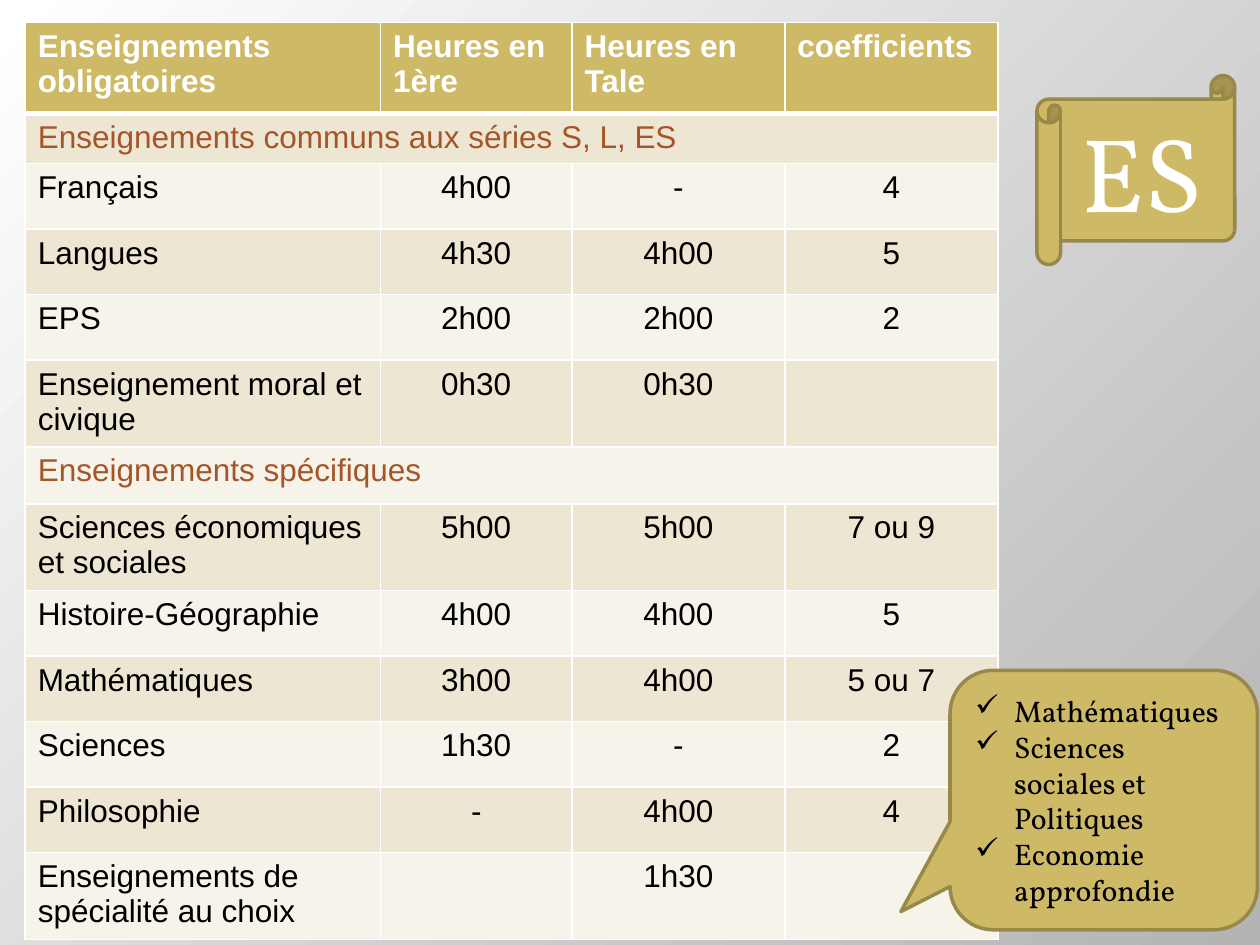
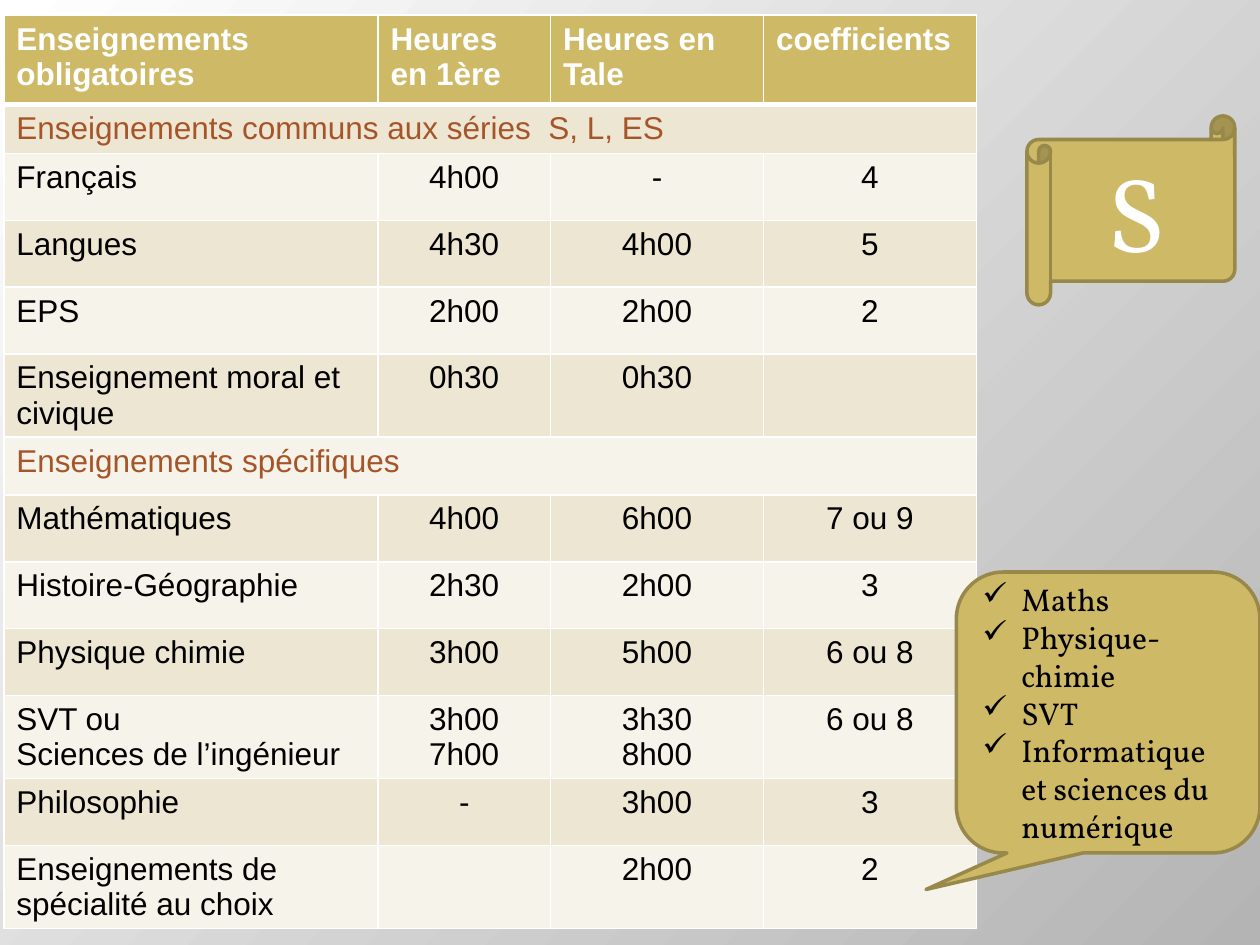
from lxml import etree
from pptx import Presentation
from pptx.dml.color import RGBColor
from pptx.enum.shapes import MSO_SHAPE
from pptx.enum.text import MSO_ANCHOR, PP_ALIGN
from pptx.oxml.ns import qn
from pptx.util import Inches, Pt

COLORS = {
    "gold": "CEB966", "gold_line": "98894B", "sand": "EDE6D3", "cream": "F6F3EA",
    "rust": "A65528", "white": "FFFFFF", "grey": "B4B4B4", "black": "000000",
}
HEADER = ["Enseignements obligatoires", "Heures en 1ère", "Heures en Tale", "coefficients"]
COMMON = [
    ["Français", "4h00", "-", "4"],
    ["Langues", "4h30", "4h00", "5"],
    ["EPS", "2h00", "2h00", "2"],
    ["Enseignement moral et civique", "0h30", "0h30", ""],
]
SPECIFIC_TITLE = ["Enseignements spécifiques"]
CHOICE = "Enseignements de spécialité au choix"


def rgb(name):
    return RGBColor.from_string(COLORS[name])


class Deck:
    def __init__(self):
        self.prs = Presentation()
        self.prs.slide_width, self.prs.slide_height = Inches(10), Inches(7.5)
        self.s = None

    def new_slide(self):
        """Add a blank slide with the white-to-grey radial background."""
        self.s = self.prs.slides.add_slide(self.prs.slide_layouts[6])
        fill = self.s.background.fill
        fill.gradient()
        for stop, color in zip(fill.gradient_stops, ("white", "grey")):
            stop.color.rgb = rgb(color)
        lin = next(self.s.element.iter(qn("a:lin")))
        radial = etree.Element(qn("a:path"), path="circle")
        etree.SubElement(radial, qn("a:fillToRect"), r="100000", b="100000")
        lin.getparent().replace(lin, radial)

    def style(self, p, size, color, font, bold=False, align=PP_ALIGN.LEFT):
        p.alignment = align
        p.font.size, p.font.name, p.font.bold = Pt(size), font, bold
        p.font.color.rgb = rgb(color)

    def borders(self, cell, row):
        tc_pr = cell._tc.get_or_add_tcPr()
        for side in "LRTB":
            thick = (row, side) in ((0, "B"), (1, "T"))
            ln = etree.SubElement(tc_pr, qn(f"a:ln{side}"), w=str(Pt(3 if thick else 1)))
            solid = etree.SubElement(ln, qn("a:solidFill"))
            etree.SubElement(solid, qn("a:srgbClr"), val=COLORS["white"])

    def table(self, left, top, widths, heights, rows):
        """Draw the timetable; a row with a single text is a section title."""
        table = self.s.shapes.add_table(
            len(rows), len(widths), Inches(left), Inches(top),
            Inches(sum(widths)), Inches(sum(heights))).table
        for column, width in zip(table.columns, widths):
            column.width = Inches(width)
        for i, (texts, height) in enumerate(zip(rows, heights)):
            table.rows[i].height = Inches(height)
            section, header = len(texts) == 1, i == 0
            color = "white" if header else "rust" if section else "black"
            for j in range(len(widths)):
                cell = table.cell(i, j)
                self.borders(cell, i)
                cell.fill.solid()
                cell.fill.fore_color.rgb = rgb("gold" if header else "sand" if i % 2 else "cream")
                if j >= len(texts):
                    continue
                cell.text = texts[j]
                centred = j > 0 and not header
                for p in cell.text_frame.paragraphs:
                    self.style(p, 18, color, "Arial", header,
                               PP_ALIGN.CENTER if centred else PP_ALIGN.LEFT)
            if section:
                table.cell(i, 0).merge(table.cell(i, len(widths) - 1))

    def gold_shape(self, kind, box, text):
        sp = self.s.shapes.add_shape(kind, *map(Inches, box))
        sp.shadow.inherit = False
        sp.fill.solid()
        sp.fill.fore_color.rgb = rgb("gold")
        sp.line.color.rgb = rgb("gold_line")
        sp.line.width = Pt(2)
        tf = sp.text_frame
        tf.word_wrap, tf.vertical_anchor = True, MSO_ANCHOR.MIDDLE
        tf.text = text
        return sp

    def scroll(self, box, text):
        sp = self.gold_shape(MSO_SHAPE.HORIZONTAL_SCROLL, box, text)
        self.style(sp.text_frame.paragraphs[0], 60, "white", "Vollkorn", align=PP_ALIGN.CENTER)

    def callout(self, box, tip, size, items):
        """Draw a speech bubble with a ticked list; tip is relative to its centre."""
        sp = self.gold_shape(MSO_SHAPE.ROUNDED_RECTANGULAR_CALLOUT, box, "\n".join(items))
        sp.adjustments[0], sp.adjustments[1] = tip
        for p in sp.text_frame.paragraphs:
            self.style(p, size, "black", "Vollkorn")
            p_pr = p._p.get_or_add_pPr()
            p_pr.set("marL", str(Inches(0.31)))
            p_pr.set("indent", str(-Inches(0.31)))
            bullet = etree.Element(qn("a:buChar"), char="✓")
            p_pr.find(qn("a:defRPr")).addprevious(bullet)


def main():
    deck = Deck()

    deck.new_slide()
    low, tall = 0.52, 0.69
    deck.table(
        0.2, 0.18, [2.82, 1.52, 1.69, 1.69],
        [0.72, 0.4] + [low] * 3 + [tall, 0.45, tall] + [low] * 4 + [tall],
        [HEADER, ["Enseignements communs aux séries S, L, ES"], *COMMON, SPECIFIC_TITLE,
         ["Sciences économiques et sociales", "5h00", "5h00", "7 ou 9"],
         ["Histoire-Géographie", "4h00", "4h00", "5"],
         ["Mathématiques", "3h00", "4h00", "5 ou 7"],
         ["Sciences", "1h30", "-", "2"],
         ["Philosophie", "-", "4h00", "4"],
         [CHOICE, "", "1h30", ""]])
    deck.callout((7.54, 5.32, 2.44, 2.06), (-0.66, 0.43), 17,
                 ["Mathématiques", "Sciences sociales et Politiques", "Economie approfondie"])
    deck.scroll((8.23, 0.6, 1.57, 1.5), "ES")

    deck.new_slide()
    low, tall = 0.53, 0.66
    deck.table(
        0.03, 0.12, [2.97, 1.37, 1.69, 1.69],
        [0.71, 0.39] + [low] * 3 + [tall, 0.46] + [low] * 3 + [tall, low, tall],
        [HEADER, ["Enseignements communs aux séries  S, L, ES"], *COMMON, SPECIFIC_TITLE,
         ["Mathématiques", "4h00", "6h00", "7 ou 9"],
         ["Histoire-Géographie", "2h30", "2h00", "3"],
         ["Physique chimie", "3h00", "5h00", "6 ou 8"],
         ["SVT ou\nSciences de l’ingénieur", "3h00\n7h00", "3h30\n8h00", "6 ou 8"],
         ["Philosophie", "-", "3h00", "3"],
         [CHOICE, "", "2h00", "2"]])
    deck.callout((7.59, 4.54, 2.41, 2.23), (-0.6, 0.63), 18,
                 ["Maths", "Physique- chimie", "SVT", "Informatique et sciences du numérique"])
    deck.scroll((8.15, 0.92, 1.65, 1.5), "S")

    deck.prs.save("out.pptx")


if __name__ == "__main__":
    main()
